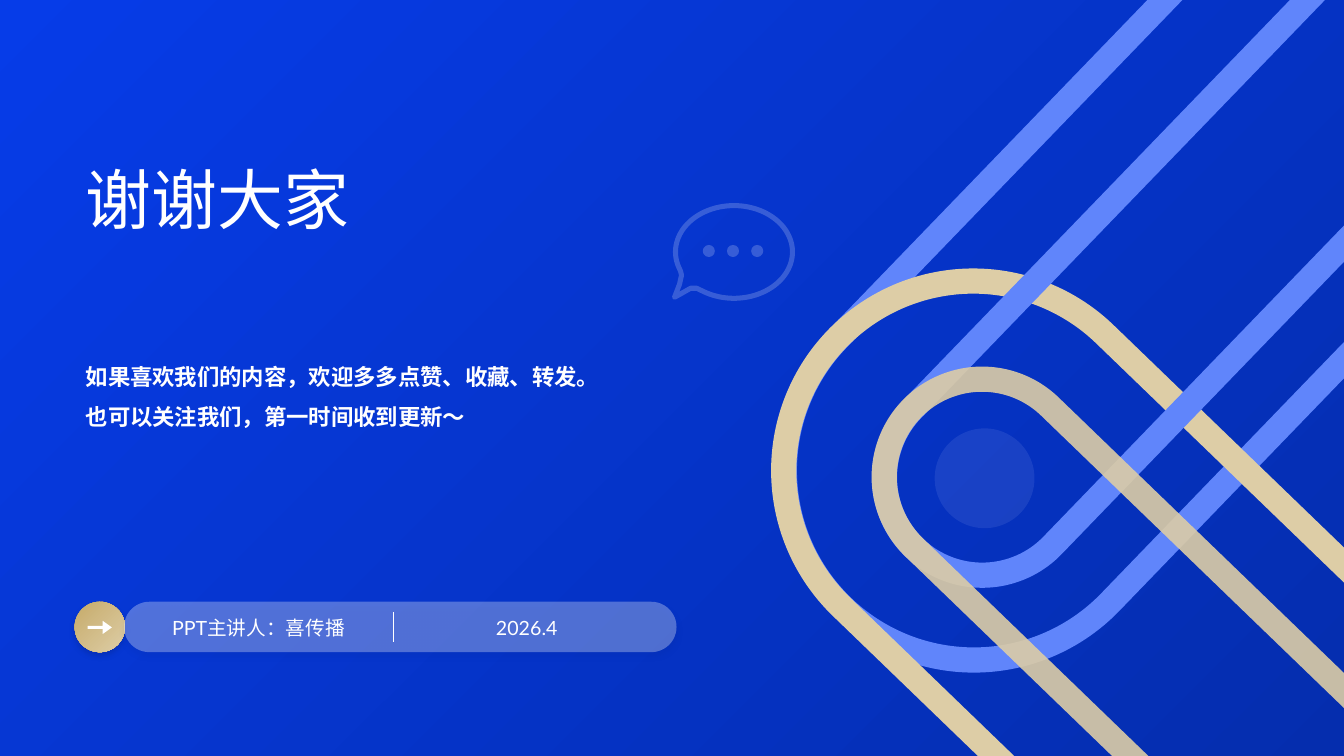
from math import cos, radians, sin

from lxml.etree import SubElement
from pptx import Presentation
from pptx.dml.color import RGBColor
from pptx.enum.shapes import MSO_CONNECTOR, MSO_SHAPE
from pptx.enum.text import MSO_ANCHOR, PP_ALIGN
from pptx.oxml.ns import qn
from pptx.util import Inches, Pt


class Theme:
    """Colours, fonts and type sizes."""
    white = "FFFFFF"
    backdrop = ("063CE8", "052DAE")
    gold = ("C6AB6A", "DDCDA6")
    sand = "DDCDA6"
    sky = "6085FB"
    pale = "CAD6FE"
    shadow = "031E74"
    font = "Lato"
    body_font = "Noto Sans CJK SC"
    title, body, label = 47, 16, 14


class Slide:
    def __init__(self, prs, theme):
        self.theme = theme
        self.shapes = prs.slides.add_slide(prs.slide_layouts[6]).shapes

    def paint(self, fmt, color, alpha=100):
        """Give a fill one colour, or a diagonal gradient for a pair."""
        if isinstance(color, tuple):
            fmt.gradient()
            fmt.gradient_angle = 315
            for stop, c in zip(fmt.gradient_stops, color):
                stop.color.rgb = RGBColor.from_string(c)
            return
        fmt.solid()
        fmt.fore_color.rgb = RGBColor.from_string(color)
        if alpha < 100:
            clr = fmt._xPr.find(qn("a:solidFill"))[0]
            SubElement(clr, qn("a:alpha"), val=str(alpha * 1000))

    def finish(self, sp, fill=None, line=None, width=0, alpha=100):
        sp.shadow.inherit = False
        if fill:
            self.paint(sp.fill, fill, alpha)
        else:
            sp.fill.background()
        if line:
            sp.line.width = Pt(width)
            self.paint(sp.line.fill, line, alpha)
        else:
            sp.line.fill.background()
        return sp

    def shape(self, kind, x, y, w, h, adj=(), rotation=0, **style):
        sp = self.shapes.add_shape(kind, Inches(x), Inches(y), Inches(w), Inches(h))
        for i, value in enumerate(adj):
            sp.adjustments[i] = value
        sp.rotation = rotation
        return self.finish(sp, **style)

    def outline(self, points, **style):
        # Points go in as whole EMU, since the builder rounds coordinates
        points = [(Inches(x), Inches(y)) for x, y in points]
        builder = self.shapes.build_freeform(*points[0])
        builder.add_line_segments(points[1:], close=True)
        return self.finish(builder.convert_to_shape(), **style)

    def drop_shadow(self, sp):
        effects = sp._element.spPr.find(qn("a:effectLst"))
        shadow = SubElement(effects, qn("a:outerShdw"), blurRad=str(Pt(4)),
                            dist=str(Pt(3)), dir="5400000", rotWithShape="0")
        clr = SubElement(shadow, qn("a:srgbClr"), val=self.theme.shadow)
        SubElement(clr, qn("a:alpha"), val="25000")

    def line(self, x1, y1, x2, y2, color, width):
        ln = self.shapes.add_connector(MSO_CONNECTOR.STRAIGHT, Inches(x1), Inches(y1),
                                       Inches(x2), Inches(y2))
        ln.line.color.rgb = RGBColor.from_string(color)
        ln.line.width = Pt(width)
        SubElement(ln._element.spPr, qn("a:effectLst"))

    def text(self, x, y, w, h, words, size, spacing=1.1, align=PP_ALIGN.LEFT,
             anchor=MSO_ANCHOR.MIDDLE, font=None, bold=False):
        tf = self.shapes.add_textbox(Inches(x), Inches(y), Inches(w), Inches(h)).text_frame
        tf.word_wrap = True
        tf.vertical_anchor = anchor
        tf.margin_left = tf.margin_right = tf.margin_top = tf.margin_bottom = 0
        p = tf.paragraphs[0]
        p.text = words
        p.alignment = align
        p.line_spacing = spacing
        p.font.name = font or self.theme.font
        p.font.size = Pt(size)
        p.font.bold = bold
        p.font.color.rgb = RGBColor.from_string(self.theme.white)


def main():
    prs = Presentation()
    prs.slide_width, prs.slide_height = Inches(13.33), Inches(7.5)
    t = Theme()
    s = Slide(prs, t)

    # Background
    s.shape(MSO_SHAPE.RECTANGLE, 0, 0, 13.33, 7.5, fill=t.backdrop)

    # Crossing loops
    for x, y, w, h, rotation, color, alpha in (
        (9.79, -2.19, 3.76, 9.55, 224, t.sky, 100),
        (9.23, 2.17, 3.76, 7.81, 314, t.sand, 100),
        (10.54, -0.61, 1.94, 7.03, 224, t.sky, 100),
        (10.14, 3.18, 1.94, 5.75, 314, t.sand, 90),
    ):
        s.shape(MSO_SHAPE.ROUND_2_SAME_RECTANGLE, x, y, w, h, (0.5, 0), rotation,
                line=color, width=18, alpha=alpha)
    s.shape(MSO_SHAPE.OVAL, 9.27, 4.25, 0.99, 0.99, fill=t.pale, alpha=10)

    # Speaker and date bar
    badge = s.shape(MSO_SHAPE.OVAL, 0.74, 5.97, 0.5, 0.5, fill=t.gold)
    s.drop_shadow(badge)
    s.shape(MSO_SHAPE.RIGHT_ARROW, 0.87, 6.16, 0.24, 0.13, (0.24, 0.7), fill=t.white)
    bar = s.shape(MSO_SHAPE.ROUNDED_RECTANGLE, 1.23, 5.97, 5.48, 0.5, (0.5,),
                  fill=t.white, alpha=30)
    s.drop_shadow(bar)
    for x, words in ((1.53, "PPT主讲人：喜传播"), (4.19, "2026.4")):
        s.text(x, 6.05, 2.07, 0.34, words, t.label, align=PP_ALIGN.CENTER)
    s.line(3.9, 6.07, 3.9, 6.37, t.white, 1)

    # Speech bubble: an oval arc closed by a tail, with three dots
    arc = [(7.28 + 0.58 * cos(radians(a)), 2.5 + 0.46 * sin(radians(a)))
           for a in range(160, 482, 3)]
    tail = [(6.91, 2.86), (6.85, 2.86), (6.78, 2.9), (6.69, 2.95),
            (6.74, 2.82), (6.76, 2.73), (6.75, 2.69)]
    s.outline(arc + tail, line=t.white, width=3.6, alpha=20)
    for i in range(3):
        s.shape(MSO_SHAPE.OVAL, 6.97 + 0.24 * i, 2.43, 0.12, 0.12, fill=t.white, alpha=20)

    # Closing words
    s.text(0.85, 0.46, 6.44, 2.94, "谢谢大家", t.title)
    s.text(0.85, 3.47, 5.22, 1.56,
           "如果喜欢我们的内容，欢迎多多点赞、收藏、转发。也可以关注我们，第一时间收到更新～",
           t.body, spacing=1.5, anchor=MSO_ANCHOR.TOP, font=t.body_font, bold=True)

    prs.save("out.pptx")


if __name__ == "__main__":
    main()
